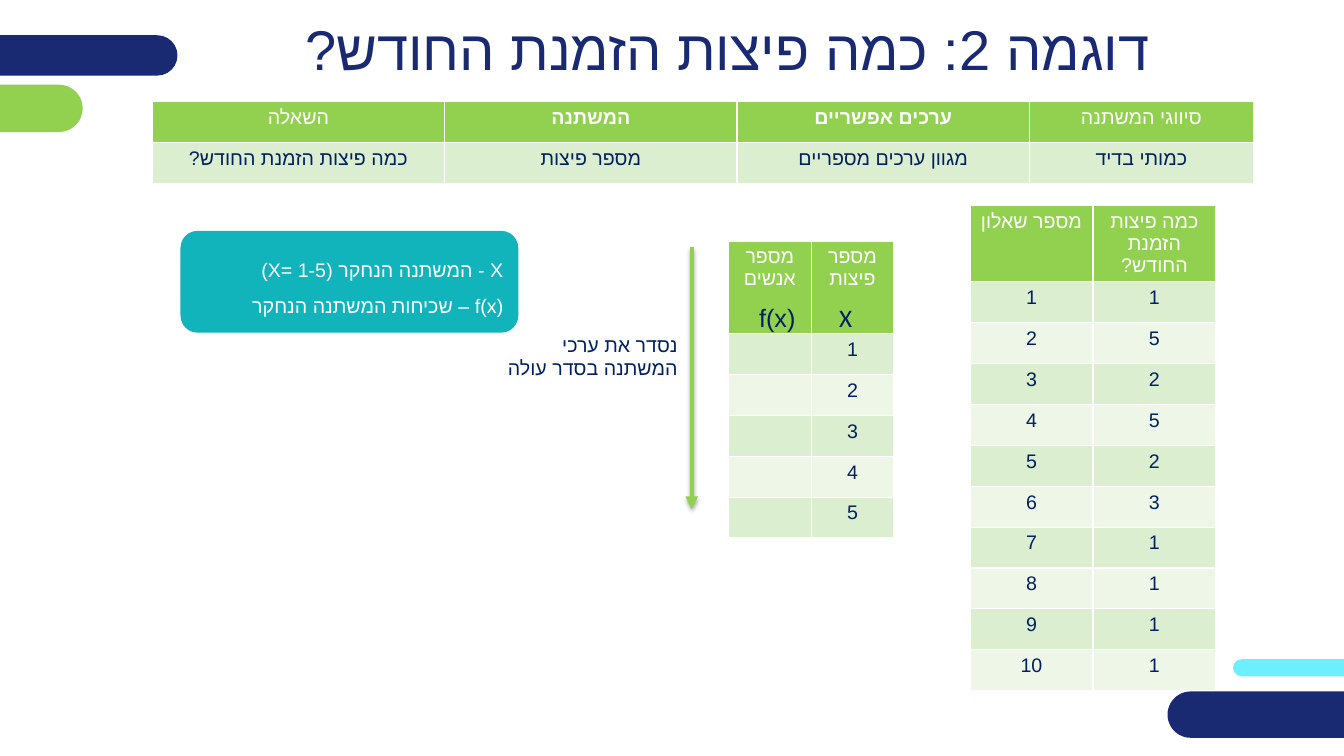
from lxml.etree import SubElement
from pptx import Presentation
from pptx.dml.color import RGBColor
from pptx.enum.shapes import MSO_CONNECTOR, MSO_SHAPE
from pptx.enum.text import MSO_ANCHOR, PP_ALIGN
from pptx.oxml import parse_xml
from pptx.oxml.ns import nsdecls, qn
from pptx.util import Inches, Pt

# Content
TITLE = "דוגמה 2: כמה פיצות הזמנת החודש?"
VARIABLE_ROWS = [
    ("השאלה", "המשתנה", "ערכים אפשריים", "סיווגי המשתנה"),
    ("כמה פיצות הזמנת החודש?", "מספר פיצות", "מגוון ערכים מספריים", "כמותי בדיד"),
]
BOLD_HEADERS = ("המשתנה", "ערכים אפשריים")
ANSWERS = (1, 5, 2, 5, 2, 3, 1, 1, 1, 1)
SURVEY_ROWS = [("מספר שאלון", "כמה פיצות הזמנת החודש?")]
SURVEY_ROWS += [(str(number), str(answer)) for number, answer in enumerate(ANSWERS, 1)]
FREQUENCY_ROWS = [("מספר אנשים", "מספר פיצות")]
FREQUENCY_ROWS += [("", str(value)) for value in range(1, 6)]
DEFINITIONS = ["X - המשתנה הנחקר (X= 1-5)", "(f(x – שכיחות המשתנה הנחקר"]
SORT_NOTE = "נסדר את ערכי המשתנה בסדר עולה"

COLORS = {
    "navy": "192A72", "green": "92D050", "cyan": "6CF0FF", "teal": "12B4BC",
    "text": "002060", "white": "FFFFFF", "odd_row": "DBEECF", "even_row": "EEF6E8",
}
ROW_HEIGHT = Pt(29.2)

# Tables: rows, left, top, column widths, header height
TABLES = [
    (VARIABLE_ROWS, 1.51, 1.01, (2.9, 2.9, 2.9, 2.22), ROW_HEIGHT),
    (SURVEY_ROWS, 9.62, 2.04, (1.22, 1.22), Inches(0.68)),
    (FREQUENCY_ROWS, 7.22, 2.39, (0.83, 0.81), Inches(0.92)),
]
# Edge pills: left, top, width, height, colour
PILLS = [
    (12.23, 6.54, 1.74, 0.17, "cyan"),
    (-0.45, 0.84, 1.27, 0.47, "green"),
    (-0.53, 0.35, 2.29, 0.4, "navy"),
    (11.58, 6.86, 2.4, 0.46, "navy"),
]
# Labels: text, left, top, width, height, size, font, right to left
LABELS = [
    (SORT_NOTE, 4.92, 3.25, 1.9, 0.81, 14, "Arial", True),
    ("X", 8.29, 2.95, 0.26, 0.4, 18, "Calibri", True),
    ("f(x)", 7.43, 2.95, 0.72, 0.4, 18, "Arial", False),
]


def color(name):
    return RGBColor.from_string(COLORS[name])


def format_paragraph(paragraph, size, color_name, alignment, font="Arial", rtl=True):
    paragraph.alignment = alignment
    if rtl:
        paragraph._p.get_or_add_pPr().set("rtl", "1")
    for run in paragraph.runs:
        run.font.size = Pt(size)
        run.font.name = font
        run.font.color.rgb = color(color_name)
        SubElement(run._r.get_or_add_rPr(), qn("a:cs"), typeface=font)


def add_filled_shape(slide, kind, box, color_name):
    shape = slide.shapes.add_shape(kind, *map(Inches, box))
    shape.shadow.inherit = False
    shape.fill.solid()
    shape.fill.fore_color.rgb = color(color_name)
    shape.line.fill.background()
    return shape


def add_data_table(slide, rows, left, top, widths, header_height):
    height = header_height + ROW_HEIGHT * (len(rows) - 1)
    table = slide.shapes.add_table(
        len(rows), len(widths), Inches(left), Inches(top), Inches(sum(widths)), height
    ).table
    for column, width in zip(table.columns, widths):
        column.width = Inches(width)
    for row_index, texts in enumerate(rows):
        is_header = row_index == 0
        table.rows[row_index].height = header_height if is_header else ROW_HEIGHT
        band = "green" if is_header else ("even_row", "odd_row")[row_index % 2]
        for column_index, text in enumerate(texts):
            cell = table.cell(row_index, column_index)
            cell.fill.solid()
            cell.fill.fore_color.rgb = color(band)
            if not text:
                continue
            cell.text_frame.text = text
            paragraph = cell.text_frame.paragraphs[0]
            format_paragraph(paragraph, 14, "white" if is_header else "text", PP_ALIGN.CENTER)
            if is_header and text in BOLD_HEADERS:
                paragraph.runs[0].font.bold = True


def add_sort_arrow(slide):
    x = Inches(6.86)
    arrow = slide.shapes.add_connector(MSO_CONNECTOR.STRAIGHT, x, Inches(2.45), x, Inches(5.05))
    arrow.line.color.rgb = color("green")
    arrow.line.width = Pt(3)
    SubElement(arrow.line._get_or_add_ln(), qn("a:tailEnd"), type="triangle")
    arrow._element.spPr.append(parse_xml(
        f'<a:effectLst {nsdecls("a")}>'
        f'<a:outerShdw blurRad="{Pt(3.1)}" dist="{Pt(1.8)}" dir="5400000" rotWithShape="0">'
        '<a:srgbClr val="000000"><a:alpha val="35000"/></a:srgbClr>'
        '</a:outerShdw></a:effectLst>'
    ))


def main():
    presentation = Presentation()
    presentation.slide_width, presentation.slide_height = Inches(13.33), Inches(7.5)
    slide = presentation.slides.add_slide(presentation.slide_layouts[5])

    # Edge decoration
    for *box, color_name in PILLS:
        add_filled_shape(slide, MSO_SHAPE.ROUNDED_RECTANGLE, box, color_name).adjustments[0] = 0.5

    # Title
    title = slide.shapes.title
    title.left, title.top, title.width, title.height = map(Inches, (1.76, 0.13, 10.91, 0.7))
    title.text_frame.text = TITLE
    title.text_frame.vertical_anchor = MSO_ANCHOR.MIDDLE
    format_paragraph(title.text_frame.paragraphs[0], 40, "navy", PP_ALIGN.CENTER)

    # Tables
    for table_content in TABLES:
        add_data_table(slide, *table_content)

    # Definitions box
    definitions = add_filled_shape(
        slide, MSO_SHAPE.FLOWCHART_ALTERNATE_PROCESS, (1.79, 2.29, 3.35, 1.01), "teal")
    definitions.text_frame.text = "\n".join(DEFINITIONS)
    definitions.text_frame.vertical_anchor = MSO_ANCHOR.MIDDLE
    for paragraph in definitions.text_frame.paragraphs:
        format_paragraph(paragraph, 14, "white", PP_ALIGN.RIGHT)
        paragraph.line_spacing = 1.5

    # Sorting arrow and labels
    add_sort_arrow(slide)
    for text, left, top, width, height, size, font, rtl in LABELS:
        label = slide.shapes.add_textbox(*map(Inches, (left, top, width, height)))
        label.text_frame.word_wrap = True
        label.text_frame.text = text
        alignment = PP_ALIGN.RIGHT if rtl else PP_ALIGN.LEFT
        format_paragraph(label.text_frame.paragraphs[0], size, "text", alignment, font, rtl)

    presentation.save("out.pptx")


if __name__ == "__main__":
    main()
